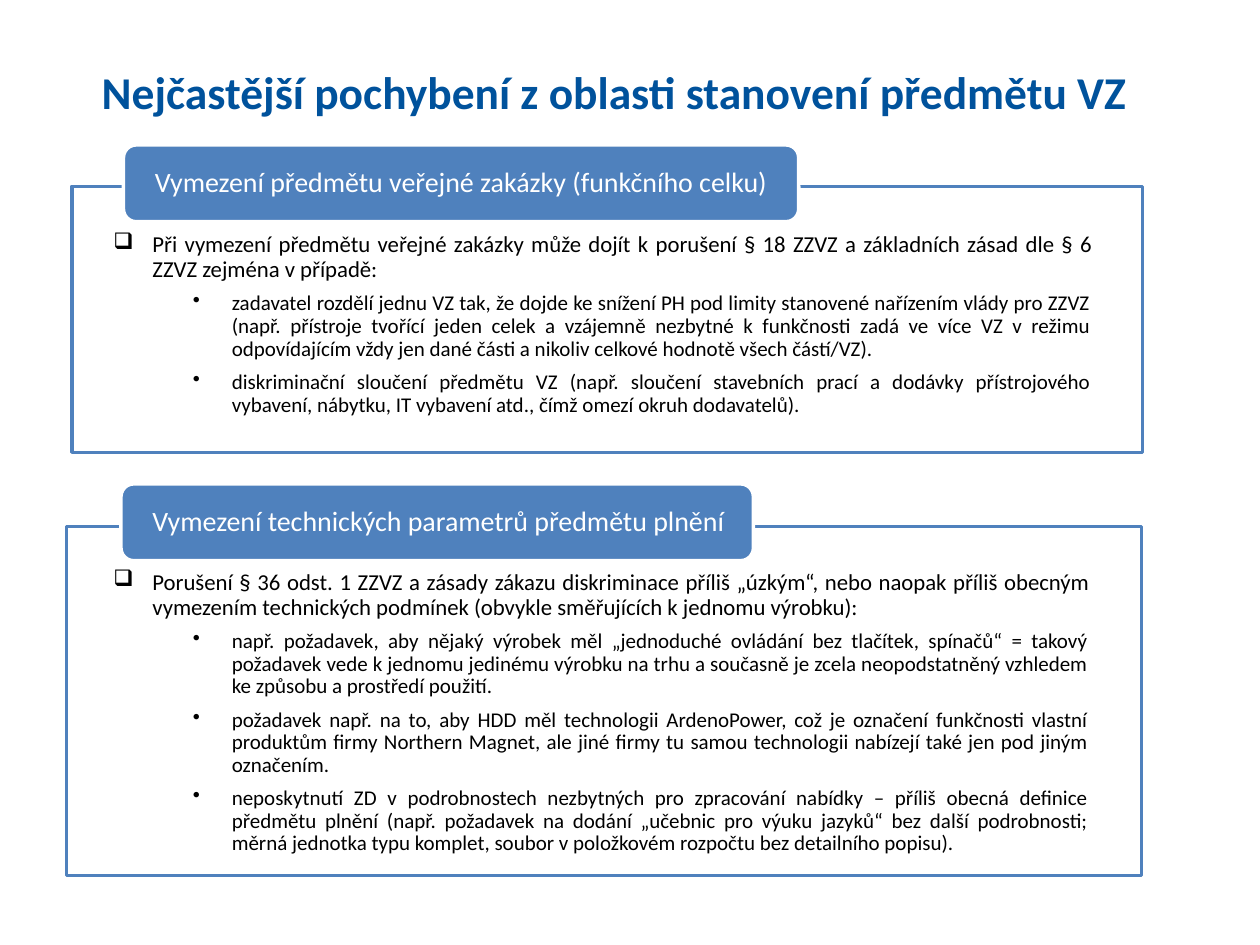
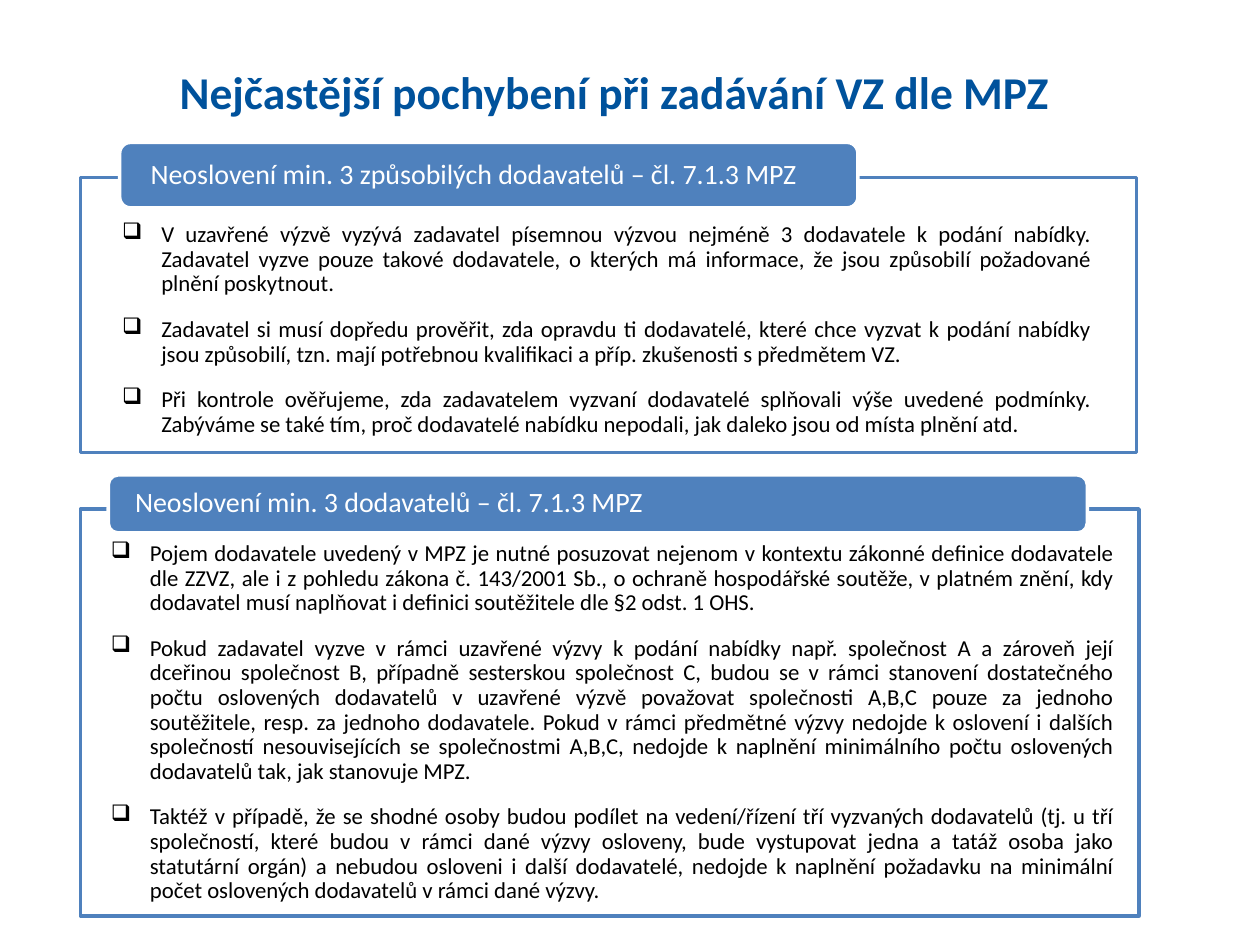
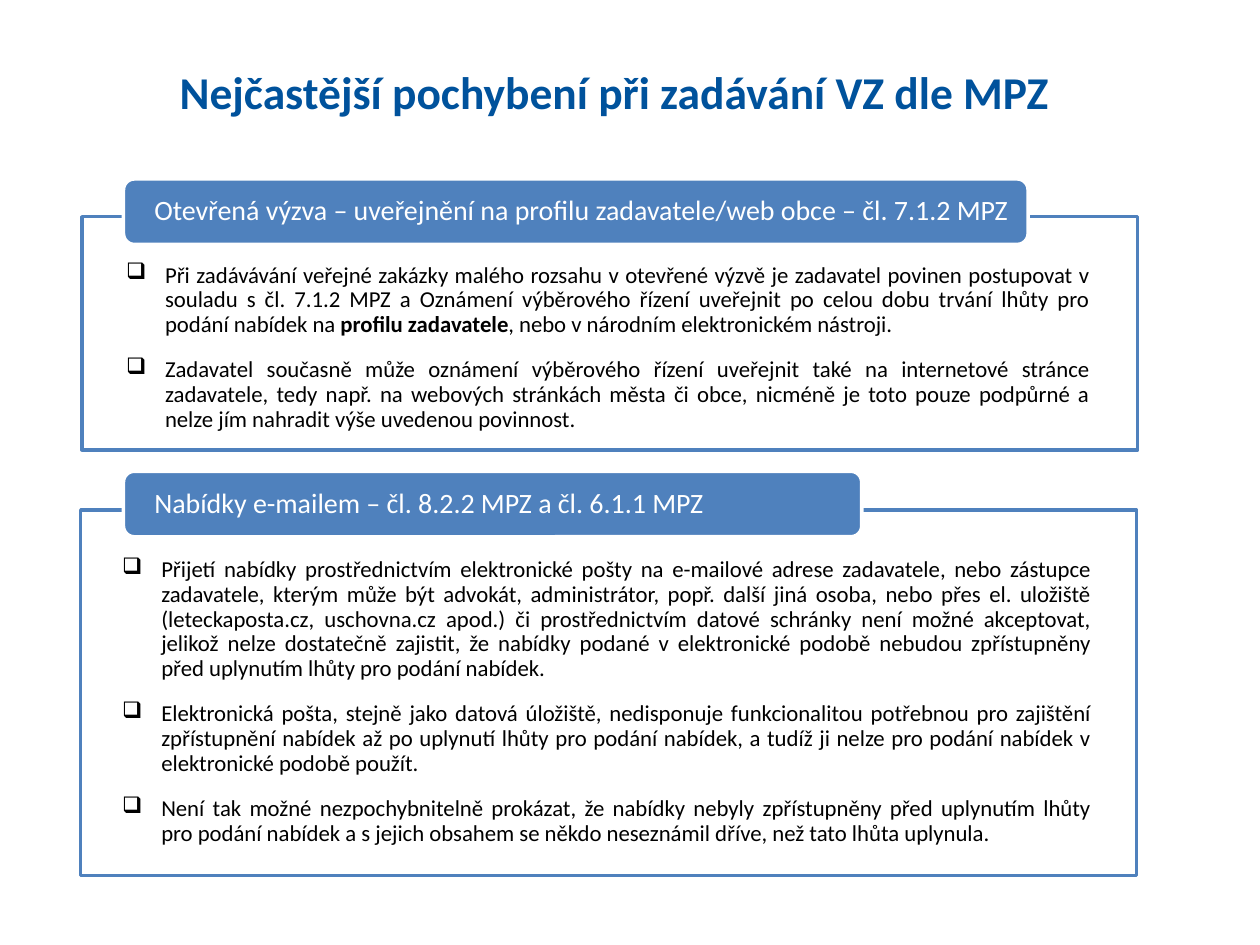
from lxml.etree import SubElement as sub
from pptx import Presentation
from pptx.dml.color import RGBColor
from pptx.enum.shapes import MSO_SHAPE as Kind
from pptx.enum.text import MSO_ANCHOR as Anchor, PP_ALIGN as Align
from pptx.oxml.ns import qn
from pptx.util import Inches, Pt

WIDE, HIGH = Inches(10), Inches(7.5)
COLS, ROWS = 100, 75
FONT = "Calibri"
NAVY, BLUE, WHITE, BLACK = "00529C", "4F81BD", "FFFFFF", "000000"
STYLE = {1: ("❑", 0.31, 13), 3: ("•", 0.94, 12)}
HANG = 0.31

MPZ = "Nejčastější pochybení při zadávání VZ dle MPZ"

PAGES = [
    ("Nejčastější pochybení z oblasti stanovení předmětu VZ", 6, [
        dict(
            frame=(5.7, 14.8, 85, 21.1), inner=(9, 18.5, 86.6),
            tab=(9.8, 11.5, 53.6, 6.1), pad=2.2,
            head="Vymezení předmětu veřejné zakázky (funkčního celku)",
            items=[
                (1, "Při vymezení předmětu veřejné zakázky může dojít k porušení § 18 ZZVZ a základních "
                    "zásad dle § 6 ZZVZ zejména v případě:"),
                (3, "zadavatel rozdělí jednu VZ tak, že dojde ke snížení PH pod limity stanovené nařízením "
                    "vlády pro ZZVZ (např. přístroje tvořící jeden celek a vzájemně nezbytné k funkčnosti "
                    "zadá ve více VZ v režimu odpovídajícím vždy jen dané části a nikoliv celkové hodnotě "
                    "všech částí/VZ)."),
                (3, "diskriminační sloučení předmětu VZ (např. sloučení stavebních prací a dodávky "
                    "přístrojového vybavení, nábytku, IT vybavení atd., čímž omezí okruh dodavatelů)."),
            ]),
        dict(
            frame=(5.3, 41.8, 85.3, 27.7), inner=(9, 45.3, 86.4),
            tab=(9.6, 38.4, 50.2, 6.1), pad=2.2,
            head="Vymezení technických parametrů předmětu plnění",
            items=[
                (1, "Porušení § 36 odst. 1 ZZVZ a zásady zákazu diskriminace příliš „úzkým“, nebo naopak "
                    "příliš obecným vymezením technických podmínek (obvykle směřujících k jednomu výrobku):"),
                (3, "např. požadavek, aby nějaký výrobek měl „jednoduché ovládání bez tlačítek, spínačů“ = "
                    "takový požadavek vede k jednomu jedinému výrobku na trhu a současně je zcela "
                    "neopodstatněný vzhledem ke způsobu a prostředí použití."),
                (3, "požadavek např. na to, aby HDD měl technologii ArdenoPower, což je označení funkčnosti "
                    "vlastní produktům firmy Northern Magnet, ale jiné firmy tu samou technologii nabízejí "
                    "také jen pod jiným označením."),
                (3, "neposkytnutí ZD v podrobnostech nezbytných pro zpracování nabídky – příliš obecná "
                    "definice předmětu plnění (např. požadavek na dodání „učebnic pro výuku jazyků“ bez "
                    "další podrobnosti; měrná jednotka typu komplet, soubor v položkovém rozpočtu bez "
                    "detailního popisu)."),
            ]),
    ]),
    (MPZ, 12, [
        dict(
            frame=(6.4, 14.1, 83.8, 21.8), inner=(9.7, 17.7, 86.5),
            tab=(9.5, 11.3, 58.6, 5.2), pad=2.2,
            head="Neoslovení min. 3 způsobilých dodavatelů – čl. 7.1.3 MPZ",
            items=[
                (1, "V uzavřené výzvě vyzývá zadavatel písemnou výzvou nejméně 3 dodavatele k podání "
                    "nabídky. Zadavatel vyzve pouze takové dodavatele, o kterých má informace, že jsou "
                    "způsobilí požadované plnění poskytnout."),
                (1, "Zadavatel si musí dopředu prověřit, zda opravdu ti dodavatelé, které chce vyzvat "
                    "k podání nabídky jsou způsobilí, tzn. mají potřebnou kvalifikaci a příp. zkušenosti "
                    "s předmětem VZ."),
                (1, "Při kontrole ověřujeme, zda zadavatelem vyzvaní dodavatelé splňovali výše uvedené "
                    "podmínky. Zabýváme se také tím, proč dodavatelé nabídku nepodali, jak daleko jsou "
                    "od místa plnění atd."),
            ]),
        dict(
            frame=(6.4, 40.4, 84, 32.3), inner=(8.8, 43, 88.3),
            tab=(8.6, 37.7, 77.7, 4.6), pad=1.9,
            head="Neoslovení min. 3 dodavatelů – čl. 7.1.3 MPZ",
            items=[
                (1, "Pojem dodavatele uvedený v MPZ je nutné posuzovat nejenom v kontextu zákonné definice "
                    "dodavatele dle ZZVZ, ale i z pohledu zákona č. 143/2001 Sb., o ochraně hospodářské "
                    "soutěže, v platném znění, kdy dodavatel musí naplňovat i definici soutěžitele dle "
                    "§2 odst. 1 OHS."),
                (1, "Pokud zadavatel vyzve v rámci uzavřené výzvy k podání nabídky např. společnost A "
                    "a zároveň její dceřinou společnost B, případně sesterskou společnost C, budou se "
                    "v rámci stanovení dostatečného počtu oslovených dodavatelů v uzavřené výzvě považovat "
                    "společnosti A,B,C pouze za jednoho soutěžitele, resp. za jednoho dodavatele. Pokud "
                    "v rámci předmětné výzvy nedojde k oslovení i dalších společností nesouvisejících se "
                    "společnostmi A,B,C, nedojde k naplnění minimálního počtu oslovených dodavatelů tak, "
                    "jak stanovuje MPZ."),
                (1, "Taktéž v případě, že se shodné osoby budou podílet na vedení/řízení tří vyzvaných "
                    "dodavatelů (tj. u tří společností, které budou v rámci dané výzvy osloveny, bude "
                    "vystupovat jedna a tatáž osoba jako statutární orgán) a nebudou osloveni i další "
                    "dodavatelé, nedojde k naplnění požadavku na minimální počet oslovených dodavatelů "
                    "v rámci dané výzvy."),
            ]),
    ]),
    (MPZ, 12, [
        dict(
            frame=(6.5, 17.2, 83.8, 18.5), inner=(10, 20.9, 86.4),
            tab=(9.8, 14.2, 71.8, 5.2), pad=2.2,
            head="Otevřená výzva – uveřejnění na profilu zadavatele/web obce – čl. 7.1.2 MPZ",
            items=[
                (1, "Při zadávávání veřejné zakázky malého rozsahu v otevřené výzvě je zadavatel povinen "
                    "postupovat v souladu s čl. 7.1.2 MPZ a Oznámení výběrového řízení uveřejnit po celou "
                    "dobu trvání lhůty pro podání nabídek na *profilu zadavatele*, nebo v národním "
                    "elektronickém nástroji."),
                (1, "Zadavatel současně může oznámení výběrového řízení uveřejnit také na internetové "
                    "stránce zadavatele, tedy např. na webových stránkách města či obce, nicméně je toto "
                    "pouze podpůrné a nelze jím nahradit výše uvedenou povinnost."),
            ]),
        dict(
            frame=(6.4, 40.5, 83.8, 29), inner=(9.7, 44.3, 86.5),
            tab=(9.8, 37.4, 58.6, 5.2), pad=2.2,
            head="Nabídky e-mailem – čl. 8.2.2 MPZ a čl. 6.1.1 MPZ",
            items=[
                (1, "Přijetí nabídky prostřednictvím elektronické pošty na e-mailové adrese zadavatele, "
                    "nebo zástupce zadavatele, kterým může být advokát, administrátor, popř. další jiná "
                    "osoba, nebo přes el. uložiště (leteckaposta.cz, uschovna.cz apod.) či prostřednictvím "
                    "datové schránky není možné akceptovat, jelikož nelze dostatečně zajistit, že nabídky "
                    "podané v elektronické podobě nebudou zpřístupněny před uplynutím lhůty pro podání "
                    "nabídek."),
                (1, "Elektronická pošta, stejně jako datová úložiště, nedisponuje funkcionalitou potřebnou "
                    "pro zajištění zpřístupnění nabídek až po uplynutí lhůty pro podání nabídek, a tudíž ji "
                    "nelze pro podání nabídek v elektronické podobě použít."),
                (1, "Není tak možné nezpochybnitelně prokázat, že nabídky nebyly zpřístupněny před uplynutím "
                    "lhůty pro podání nabídek a s jejich obsahem se někdo neseznámil dříve, než tato lhůta "
                    "uplynula."),
            ]),
    ]),
]


def col(n):
    return int(WIDE * n / COLS)


def row(n):
    return int(HIGH * n / ROWS)


def area(x, y, w, h):
    return col(x), row(y), col(w), row(h)


def paint(tone):
    return RGBColor.from_string(tone)


def ink(run, size, tone, bold=False):
    font = run.font
    font.name, font.size, font.bold = FONT, Pt(size), bold
    font.color.rgb = paint(tone)


def inset(frame, left=0, top=0, right=0, low=0):
    frame.word_wrap = True
    frame.margin_left, frame.margin_right = col(left), col(right)
    frame.margin_top, frame.margin_bottom = row(top), row(low)


def block(slide, kind, place, fill, edge):
    shape = slide.shapes.add_shape(kind, *area(*place))
    shape.shadow.inherit = False
    shape.fill.solid()
    shape.fill.fore_color.rgb = paint(fill)
    shape.line.color.rgb = paint(edge)
    shape.line.width = Pt(2)
    return shape


def title(slide, text):
    frame = slide.shapes.add_textbox(*area(5.3, 4.4, 87, 5.7)).text_frame
    inset(frame, 1, 0.5, 1, 0.5)
    frame.vertical_anchor = Anchor.MIDDLE
    frame.text = text
    para = frame.paragraphs[0]
    para.alignment = Align.CENTER
    ink(para.runs[0], 26, NAVY, True)


def bullet(para, level, text, gap):
    mark, left, size = STYLE[level]
    para.level = level
    para.alignment = Align.JUSTIFY
    para.line_spacing = 0.9
    para.space_before = Pt(gap)
    props = para._p.get_or_add_pPr()
    props.set("marL", str(Inches(left)))
    props.set("indent", str(-Inches(HANG)))
    sub(props, qn("a:buChar")).set("char", mark)
    for i, part in enumerate(text.split("*")):
        run = para.add_run()
        run.text = part
        ink(run, size, BLACK, i % 2 == 1)


def panel(slide, place, inner, items, gap):
    x, y, w, h = place
    left, top, right = inner
    frame = block(slide, Kind.RECTANGLE, place, WHITE, BLUE).text_frame
    inset(frame, left - x, top - y, x + w - right)
    frame.vertical_anchor = Anchor.TOP
    for i, (level, text) in enumerate(items):
        para = frame.add_paragraph() if i else frame.paragraphs[0]
        bullet(para, level, text, gap if i else 0)


def label(slide, place, pad, text):
    frame = block(slide, Kind.ROUNDED_RECTANGLE, place, BLUE, WHITE).text_frame
    inset(frame, left=pad)
    frame.vertical_anchor = Anchor.MIDDLE
    frame.text = text
    para = frame.paragraphs[0]
    para.alignment = Align.LEFT
    para.line_spacing = 0.9
    ink(para.runs[0], 16, WHITE)


def main():
    deck = Presentation()
    deck.slide_width, deck.slide_height = WIDE, HIGH
    for name, gap, parts in PAGES:
        slide = deck.slides.add_slide(deck.slide_layouts[6])
        title(slide, name)
        for part in parts:
            panel(slide, part["frame"], part["inner"], part["items"], gap)
            label(slide, part["tab"], part["pad"], part["head"])
    deck.save("out.pptx")


if __name__ == "__main__":
    main()
